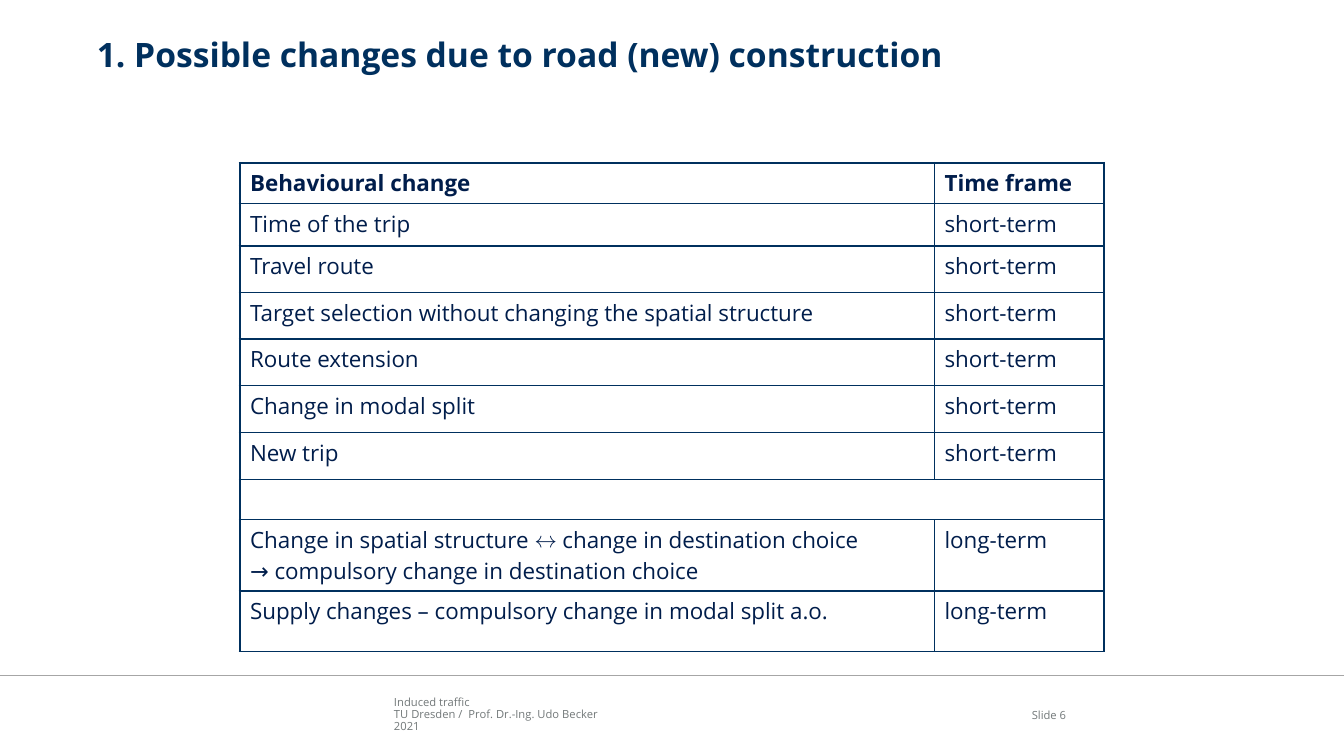
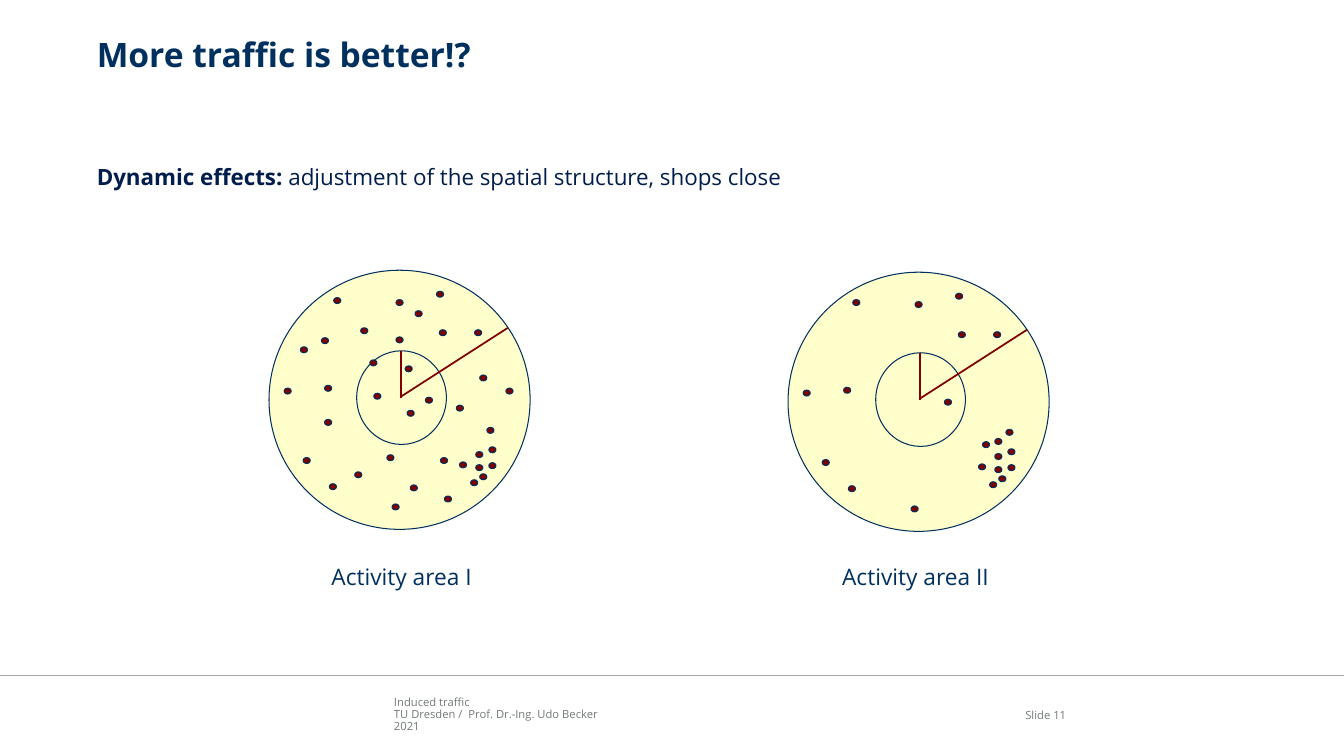
"""Build two slides on induced traffic: a table of changes and two activity areas."""
from lxml.etree import SubElement
from pptx import Presentation
from pptx.dml.color import RGBColor
from pptx.enum.shapes import MSO_CONNECTOR as Link, MSO_SHAPE as Shape
from pptx.enum.text import MSO_ANCHOR as Anchor, PP_ALIGN as Align
from pptx.oxml import parse_xml
from pptx.oxml.ns import nsdecls, qn
from pptx.util import Cm, Pt

FONT = "Open Sans"
NAVY, INK, GREY, RULE = "00305E", "001D4B", "727879", "A6A6A6"
CREAM, RED = "FFFFCC", "800000"
WIDE, HIGH = 33.87, 19.05
LEFT, SPAN = 2.44, 29.39

FOOTER = ["Induced traffic", "TU Dresden /  Prof. Dr.-Ing. Udo Becker", "2021"]

TITLE_1 = "1. Possible changes due to road (new) construction"
COLS = [17.5, 4.27]
ROWS = [
    (1.02, "Behavioural change", "Time frame"),
    (1.07, "Time of the trip", "short-term"),
    (1.17, "Travel route", "short-term"),
    (1.17, "Target selection without changing the spatial structure", "short-term"),
    (1.17, "Route extension", "short-term"),
    (1.19, "Change in modal split", "short-term"),
    (1.18, "New trip", "short-term"),
    (1.02, "", ""),
    (1.79, "Change in spatial structure ↔ change in destination choice\v"
           "→ compulsory change in destination choice", "long-term"),
    (1.53, "Supply changes – compulsory change in modal split a.o.", "long-term"),
]

TITLE_2 = "More traffic is better!?"
LEAD = ("Dynamic effects: ", "adjustment of the spatial structure, shops close")
KEPT = [
    (4.29, 1.5), (5.49, 3.96), (3.1, 5.89), (3.2, 0.74), (0.86, 4.72),
    (0.38, 2.97), (1.52, 5.38), (5.21, 4.9), (5.08, 5.28), (4.8, 4.83),
    (5.54, 4.85), (5.21, 4.57), (4.22, 0.53), (1.4, 2.9), (1.63, 0.69),
    (5.18, 1.5), (5.31, 5.13), (5.54, 4.45), (3.94, 3.2),
]
CLOSED = [
    (2.16, 5.08), (1.32, 1.7), (4.42, 5.69), (4.32, 4.72), (1.4, 3.76),
    (5.97, 2.97), (2.97, 4.65), (5.31, 2.64), (2.31, 1.45), (3.2, 1.68),
    (4.72, 3.4), (3.56, 5.41), (0.79, 1.93), (3.68, 1.02), (3.48, 3.53),
    (2.64, 3.1), (3.43, 2.41), (2.54, 2.26),
]
OPENED = [(5.21, 4.19), (4.9, 4.27)]
AREAS = [
    ("Activity area I", 6.78, 6.81, 6.35, KEPT + CLOSED),
    ("Activity area II", 19.86, 6.86, 19.3, KEPT + OPENED),
]
OUTER, INNER, DOT = (6.58, 6.53), (2.26, 2.36), (0.18, 0.15)
INSET = (2.21, 2.03)
RADII = [((3.33, 3.23), (3.33, 2.03)), ((3.33, 3.18), (6.02, 1.45))]


def rgb(code):
    return RGBColor.from_string(code)


def style(run, size, color, bold=False):
    font = run.font
    font.name, font.size, font.bold = FONT, Pt(size), bold
    font.color.rgb = rgb(color)


def text(slide, box, lines, size, color, bold=False, align=Align.LEFT,
         anchor=Anchor.TOP, pad=0, space=1.0):
    frame = slide.shapes.add_textbox(*map(Cm, box)).text_frame
    frame.word_wrap = True
    frame.vertical_anchor = anchor
    frame.margin_left = frame.margin_right = Cm(2 * pad)
    frame.margin_top = frame.margin_bottom = Cm(pad)
    frame.text = "\n".join(lines)
    for para in frame.paragraphs:
        para.alignment, para.line_spacing = align, space
        for run in para.runs:
            style(run, size, color, bold)
    return frame


def line(slide, start, end, color, width):
    link = slide.shapes.add_connector(Link.STRAIGHT, *map(Cm, start + end))
    link.line.color.rgb, link.line.width = rgb(color), Pt(width)
    SubElement(link._element.spPr, qn("a:effectLst"))


def disc(slide, x, y, size, fill):
    oval = slide.shapes.add_shape(Shape.OVAL, *map(Cm, (x, y) + size))
    oval.shadow.inherit = False
    oval.fill.solid()
    oval.fill.fore_color.rgb = rgb(fill)
    oval.line.color.rgb, oval.line.width = rgb(NAVY), Pt(0.75)


def start(deck, title, number):
    slide = deck.slides.add_slide(deck.slide_layouts[6])
    text(slide, (LEFT, 0.97, SPAN, 1.9), [title], 24, NAVY, bold=True, space=0.9)
    line(slide, (0, 17.02), (WIDE, 17.02), RULE, 1)
    text(slide, (9.93, 17.55, 14.4, 1.04), FOOTER, 8, GREY, space=0.9)
    text(slide, (24.92, 17.53, 1.95, 1.02), [f"Slide {number}"], 8, GREY,
         align=Align.RIGHT, anchor=Anchor.MIDDLE, space=0.9)
    return slide


def edge(cell, widths):
    props = cell._tc.get_or_add_tcPr()
    for spot, (side, width) in enumerate(widths.items()):
        props.insert(spot, parse_xml(
            f'<a:ln{side} {nsdecls("a")} w="{Pt(width)}"><a:solidFill>'
            f'<a:srgbClr val="{NAVY}"/></a:solidFill></a:ln{side}>'))


def grid(slide, left, top):
    tall = sum(row[0] for row in ROWS)
    box = map(Cm, (left, top, sum(COLS), tall))
    table = slide.shapes.add_table(len(ROWS), len(COLS), *box).table
    table.first_row = table.horz_banding = False
    for col, width in zip(table.columns, COLS):
        col.width = Cm(width)
    for r, (height, *words) in enumerate(ROWS):
        table.rows[r].height = Cm(height)
        whole = not any(words)
        if whole:
            table.cell(r, 0).merge(table.cell(r, 1))
        for c, word in enumerate(words):
            cell = table.cell(r, c)
            cell.fill.background()
            if cell.is_spanned:
                continue
            cell.text_frame.text = word
            for run in cell.text_frame.paragraphs[0].runs:
                style(run, 16, INK, bold=r == 0)
            last = whole or c == len(COLS) - 1
            edge(cell, {"L": 1 if c else 2.25, "R": 2.25 if last else 1,
                        "T": 1 if r else 2.25, "B": 1})


def area(slide, name, x, y, side, dots):
    disc(slide, x, y, OUTER, CREAM)
    disc(slide, x + INSET[0], y + INSET[1], INNER, CREAM)
    for dx, dy in dots:
        disc(slide, x + dx, y + dy, DOT, RED)
    for ends in RADII:
        line(slide, *((x + dx, y + dy) for dx, dy in ends), RED, 1.25)
    text(slide, (side, 14.05, 7.54, 0.94), [name], 16.2, NAVY,
         align=Align.CENTER, pad=0.13)


def main():
    deck = Presentation()
    deck.slide_width, deck.slide_height = Cm(WIDE), Cm(HIGH)
    grid(start(deck, TITLE_1, 6), 6.05, 4.11)
    slide = start(deck, TITLE_2, 11)
    frame = text(slide, (LEFT, 4.11, SPAN, 1.2), LEAD[:1], 16, INK, bold=True)
    run = frame.paragraphs[0].add_run()
    run.text = LEAD[1]
    style(run, 16, INK)
    for item in AREAS:
        area(slide, *item)
    deck.save("out.pptx")


if __name__ == "__main__":
    main()
